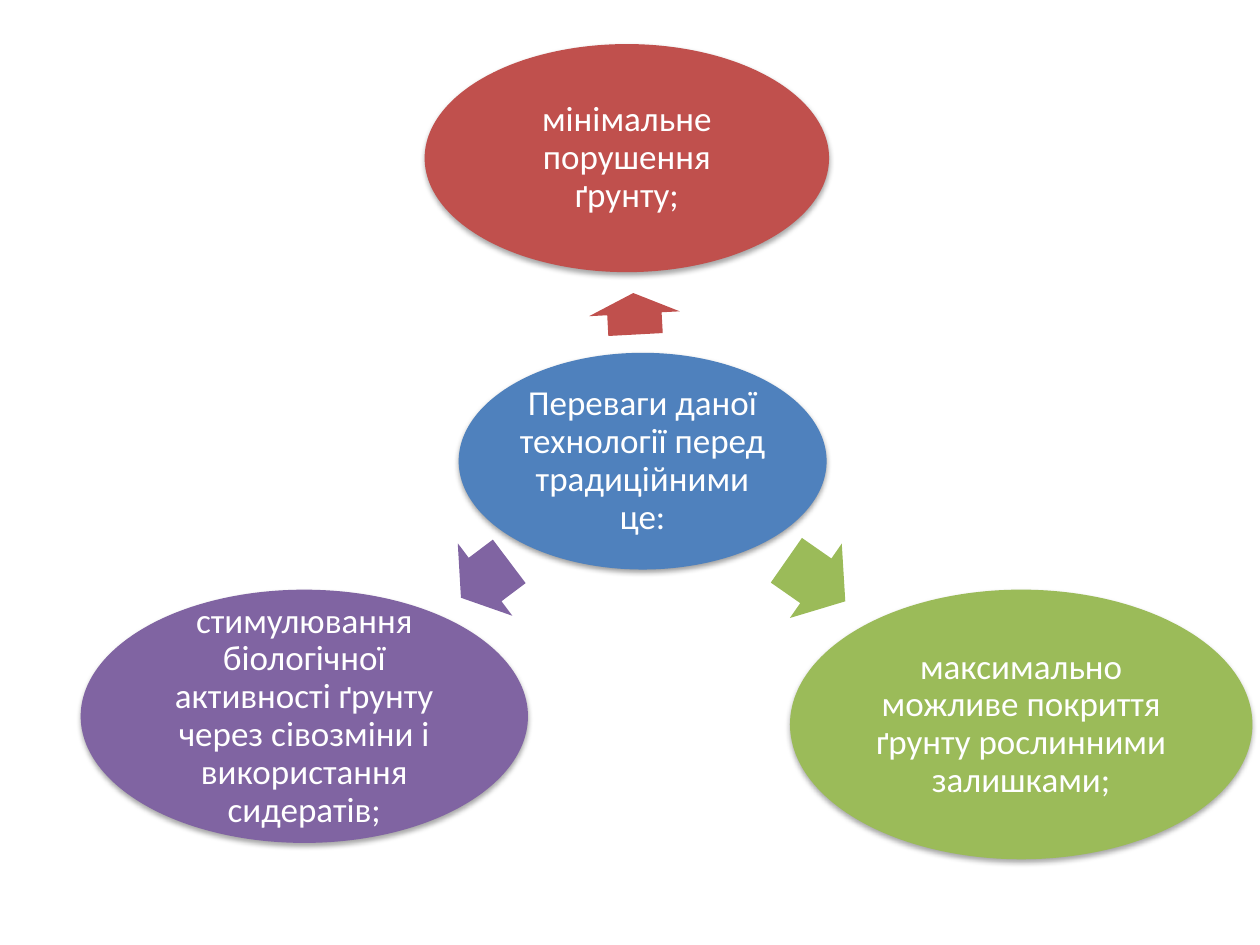
from pptx import Presentation
from pptx.dml.color import RGBColor as RGB
from pptx.enum.shapes import MSO_SHAPE as Kind
from pptx.enum.text import MSO_ANCHOR as Anchor, PP_ALIGN as Align
from pptx.oxml import parse_xml
from pptx.oxml.ns import nsdecls, qn
from pptx.util import Inches, Pt

# Slide and its grid of 100 columns by 75 rows
deck = Presentation()
deck.slide_width, deck.slide_height = Inches(10), Inches(7.5)
slide = deck.slides.add_slide(deck.slide_layouts[6])
col, row = deck.slide_width / 100, deck.slide_height / 75


def draw(kind, box, color):
    x, y, w, h = box
    shape = slide.shapes.add_shape(
        kind, round(x * col), round(y * row), round(w * col), round(h * row))
    shape.shadow.inherit = False
    shape.fill.solid()
    shape.fill.fore_color.rgb = RGB.from_string(color)
    shape.line.fill.background()
    return shape


def shade(shape, alpha, dist):
    effects = shape.element.spPr.find(qn("a:effectLst"))
    effects.append(parse_xml(
        f'<a:outerShdw {nsdecls("a")} blurRad="{Pt(3.1)}" dist="{Pt(dist)}" '
        'dir="5400000" rotWithShape="0"><a:srgbClr val="000000">'
        f'<a:alpha val="{alpha * 1000}"/></a:srgbClr></a:outerShdw>'))


# Hub first, then each benefit: color, text, oval box, arrow box, arrow angle
nodes = [
    ("4F81BD", "Переваги даної технології перед традиційними це:",
     (36.4, 28, 29.2, 17.2), None, 0),
    ("C0504D", "мінімальне порушення ґрунту;",
     (33.7, 3.5, 32.1, 18.1), (48.7, 21.3, 3.3, 7.2), 266.9),
    ("9BBB59", "максимально можливе покриття ґрунту рослинними залишками;",
     (62.7, 46.8, 36.7, 21.4), (61.9, 42.5, 5.7, 7.2), 34.9),
    ("8064A2", "стимулювання біологічної активності ґрунту через сівозміни "
     "і використання сидератів;",
     (6.4, 46.8, 35.5, 20.1), (36.1, 42.4, 4.8, 7.2), 143),
]

for color, text, box, way, angle in nodes:
    # Arrow from the hub
    if way:
        arrow = draw(Kind.RIGHT_ARROW, way, color)
        arrow.adjustments[0], arrow.adjustments[1] = 0.6, 0.5
        arrow.rotation = angle

    # Oval with its shadow
    oval = draw(Kind.OVAL, box, color)
    if way:
        shade(oval, 35, 1.8)
    else:
        shade(oval, 38, 1.6)

    # Label
    frame = oval.text_frame
    frame.word_wrap = True
    frame.vertical_anchor = Anchor.MIDDLE
    frame.margin_left = frame.margin_right = Inches(0.03)
    frame.margin_top = frame.margin_bottom = Inches(0.03)
    para = frame.paragraphs[0]
    para.alignment = Align.CENTER
    para.line_spacing = 0.9
    run = para.add_run()
    run.text = text
    run.font.name = "Calibri"
    run.font.size = Pt(20)
    run.font.color.rgb = RGB.from_string("FFFFFF")

deck.save("out.pptx")
